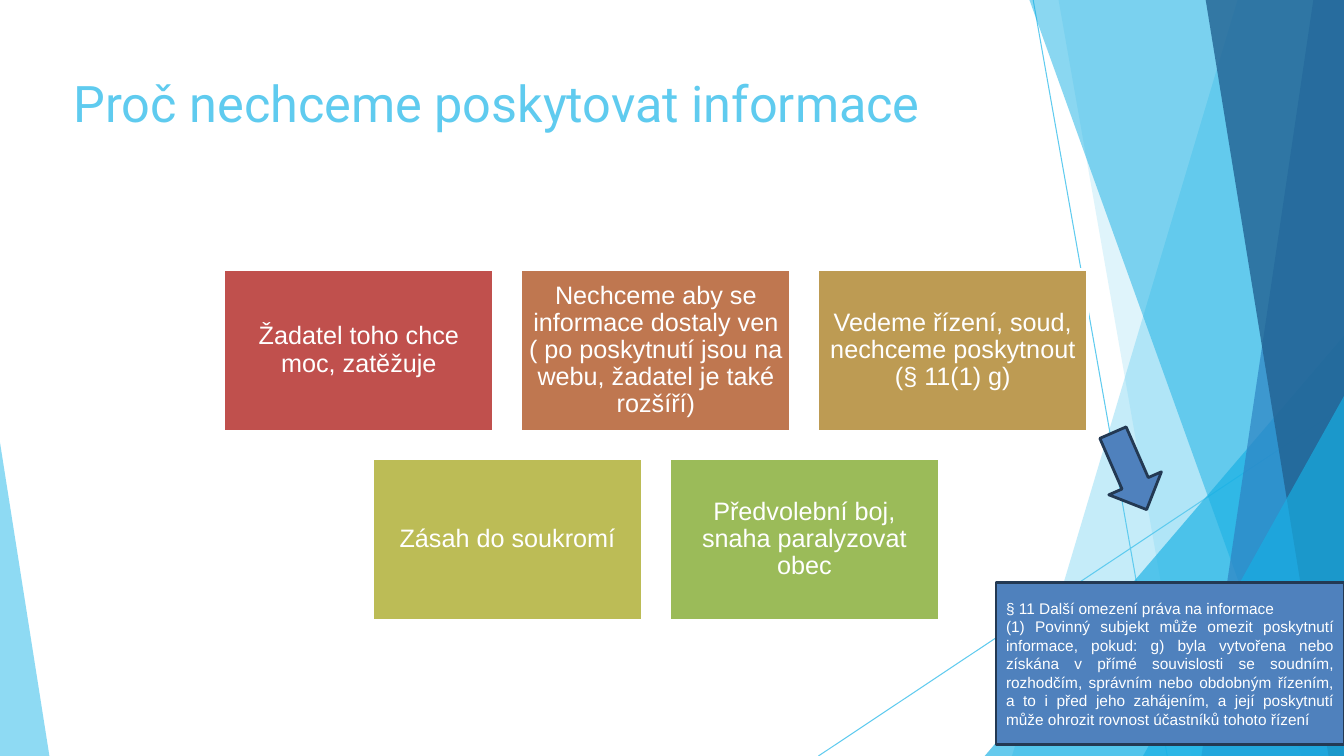
import pptx
import pptx.util
import pptx.dml.color
import pptx.enum.shapes
import pptx.enum.text
import pptx.oxml.ns
import lxml.etree

Pt = pptx.util.Pt
SHAPE = pptx.enum.shapes.MSO_SHAPE
ALIGN = pptx.enum.text.PP_ALIGN
ANCHOR = pptx.enum.text.MSO_ANCHOR

TITLE = "Proč nechceme poskytovat informace"
REASON_ROWS = [
    [
        ("Žadatel toho chce moc, zatěžuje", "C0504D"),
        ("Nechceme aby se informace dostaly ven ( po poskytnutí jsou na webu, žadatel je také rozšíří)", "BF7750"),
        ("Vedeme řízení, soud, nechceme poskytnout (§ 11(1) g)", "BD9B53"),
    ],
    [
        ("Zásah do soukromí", "BCBC56"),
        ("Předvolební boj, snaha paralyzovat obec", "9BBB59"),
    ],
]
LAW = [
    "§ 11 Další omezení práva na informace",
    "(1) Povinný subjekt může omezit poskytnutí informace, pokud: g) byla vytvořena nebo získána "
    "v přímé souvislosti se soudním, rozhodčím, správním nebo obdobným řízením, a to i před jeho "
    "zahájením, a její poskytnutí může ohrozit rovnost účastníků tohoto řízení",
]

THEME = {
    "sky": "5FCBEF", "azure": "17B0E4", "blue": "2E83C3", "navy": "226292",
    "white": "FFFFFF", "law": "4F81BD", "law_edge": "233953",
    "title_font": "Roboto", "body_font": "Arial",
    "title_size": 36, "reason_size": 18, "law_size": 11,
}
WIDTH, HEIGHT = 960, 540

RAYS = [((738, 0), (833.8, HEIGHT)), ((WIDTH, 290.2), (584.6, HEIGHT))]
WEDGES = [
    {"top": 884.2, "bottom": 722.9, "color": "sky", "opacity": 36},
    {"top": 756, "bottom": 851, "color": "sky", "opacity": 20},
    {"corner": (703.4, 239.8, 256.6, 300.2), "apex": 1, "color": "azure", "opacity": 66},
    {"top": 735.1, "bottom": 929.5, "color": "azure", "opacity": 50},
    {"top": 938.2, "bottom": 858.2, "color": "blue", "opacity": 70},
    {"top": 861.1, "bottom": 949, "color": "navy", "opacity": 80},
    {"corner": (816.5, 283, 143.5, 257), "apex": 1, "color": "azure", "opacity": 66},
    {"corner": (0, 316.1, 35.3, 223.9), "apex": 0, "color": "sky", "opacity": 70},
]
REASON_W, REASON_H, REASON_GAP = 192.8, 115.7, 19.3
REASON_CENTER, REASON_TOP = 468.5, 192.4

prs = pptx.Presentation()
prs.slide_width, prs.slide_height = Pt(WIDTH), Pt(HEIGHT)
slide = prs.slides.add_slide(prs.slide_layouts[5])
shapes = slide.shapes


def rgb(color):
    return pptx.dml.color.RGBColor.from_string(color)


def style(shape, fill, line=None, opacity=100):
    shape.shadow.inherit = False
    shape.fill.solid()
    shape.fill.fore_color.rgb = rgb(fill)
    if line:
        shape.line.color.rgb = rgb(line)
        shape.line.width = Pt(2)
    else:
        shape.line.fill.background()
    if opacity < 100:
        tint = shape.fill._xPr.find(".//" + pptx.oxml.ns.qn("a:srgbClr"))
        lxml.etree.SubElement(tint, pptx.oxml.ns.qn("a:alpha"), val=str(opacity * 1000))


def write(shape, paragraphs, *, size, font, color, align, anchor, inset=None, spacing=None):
    frame = shape.text_frame
    frame.word_wrap = True
    frame.auto_size = pptx.enum.text.MSO_AUTO_SIZE.NONE
    frame.vertical_anchor = anchor
    if inset is not None:
        frame.margin_left = frame.margin_right = Pt(inset)
        frame.margin_top = frame.margin_bottom = Pt(inset)
    for index, text in enumerate(paragraphs):
        paragraph = frame.paragraphs[0] if index == 0 else frame.add_paragraph()
        paragraph.alignment = align
        if spacing:
            paragraph.line_spacing = spacing
        run = paragraph.add_run()
        run.text = text
        run.font.size = Pt(size)
        run.font.name = font
        run.font.color.rgb = rgb(color)


def add_preset(kind, left, top, width, height):
    return shapes.add_shape(kind, Pt(left), Pt(top), Pt(width), Pt(height))


for start, end in RAYS:
    ray = shapes.add_connector(
        pptx.enum.shapes.MSO_CONNECTOR.STRAIGHT, *(Pt(value) for value in start + end))
    ray.line.color.rgb = rgb(THEME["sky"])
    ray.line.width = Pt(0.75)
    lxml.etree.SubElement(ray._element.spPr, pptx.oxml.ns.qn("a:effectLst"))

for part in WEDGES:
    if "corner" in part:
        wedge = add_preset(SHAPE.ISOSCELES_TRIANGLE, *part["corner"])
        wedge.adjustments[0] = part["apex"]
    else:
        outline = shapes.build_freeform(Pt(part["top"]), Pt(-0.7))
        outline.add_line_segments(
            [(Pt(WIDTH), Pt(-0.7)), (Pt(WIDTH), Pt(HEIGHT)), (Pt(part["bottom"]), Pt(HEIGHT))])
        wedge = outline.convert_to_shape()
    style(wedge, THEME[part["color"]], opacity=part["opacity"])

title = shapes.title
title.left, title.top, title.width, title.height = Pt(45.4), Pt(48), Pt(677), Pt(104)
write(title, [TITLE], size=THEME["title_size"], font=THEME["title_font"], color=THEME["sky"],
      align=ALIGN.LEFT, anchor=ANCHOR.TOP)

for row, reasons in enumerate(REASON_ROWS):
    row_width = len(reasons) * (REASON_W + REASON_GAP) - REASON_GAP
    for column, (text, color) in enumerate(reasons):
        reason = add_preset(
            SHAPE.RECTANGLE,
            REASON_CENTER - row_width / 2 + column * (REASON_W + REASON_GAP),
            REASON_TOP + row * (REASON_H + REASON_GAP),
            REASON_W, REASON_H)
        style(reason, color, THEME["white"])
        write(reason, [text], size=THEME["reason_size"], font=THEME["body_font"],
              color=THEME["white"], align=ALIGN.CENTER, anchor=ANCHOR.MIDDLE,
              inset=4.8, spacing=0.9)

law = add_preset(SHAPE.RECTANGLE, 711.5, 416, 248.5, 116)
style(law, THEME["law"], THEME["law_edge"])
write(law, LAW, size=THEME["law_size"], font=THEME["body_font"], color=THEME["white"],
      align=ALIGN.JUSTIFY, anchor=ANCHOR.MIDDLE)

arrow = add_preset(SHAPE.RIGHT_ARROW, 777, 316, 60, 41)
arrow.rotation = 66.4
style(arrow, THEME["law"], THEME["law_edge"])

prs.save("out.pptx")
